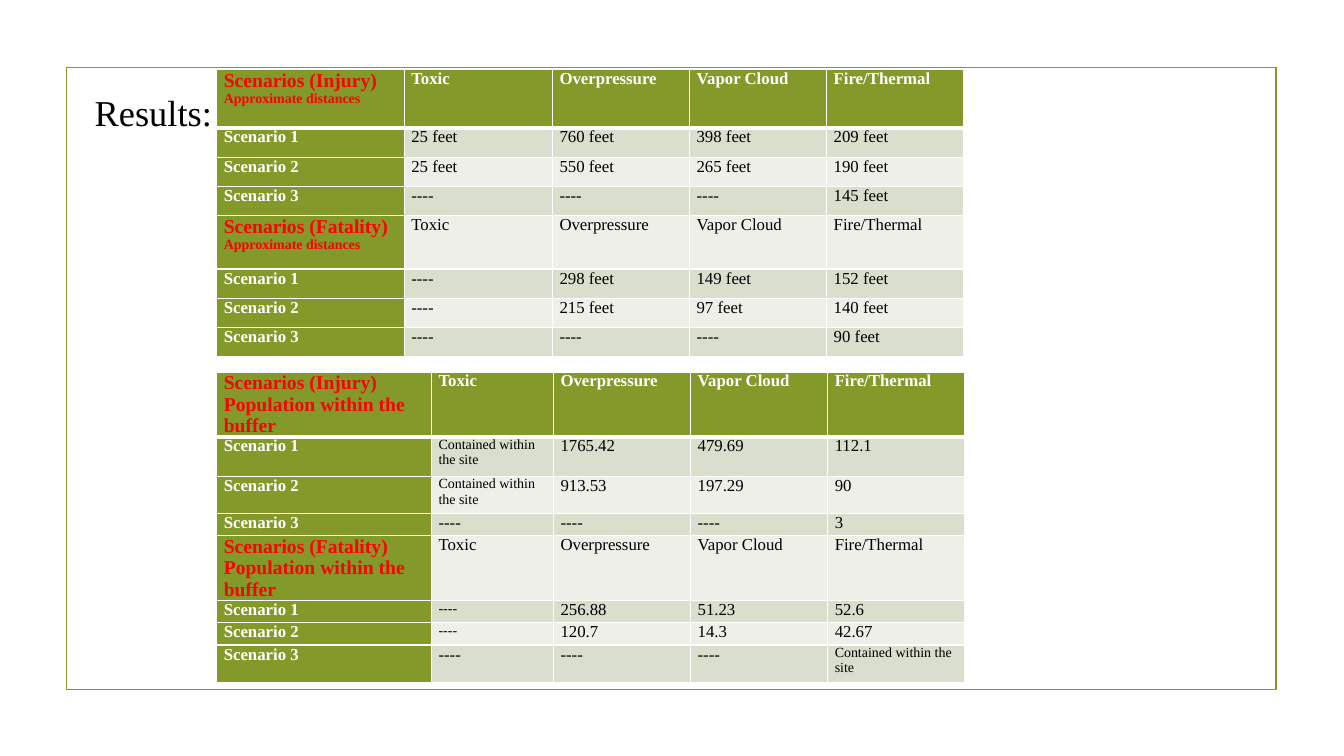
from lxml import etree
from pptx import Presentation
from pptx.dml.color import RGBColor
from pptx.enum.shapes import MSO_SHAPE
from pptx.oxml.ns import qn
from pptx.util import Inches, Pt

RECTANGLE = MSO_SHAPE.RECTANGLE
OLIVE = RGBColor(0x83, 0x99, 0x2A)
BAND_DARK = RGBColor(0xD9, 0xDE, 0xCD)
BAND_LIGHT = RGBColor(0xED, 0xEF, 0xE8)
WHITE = RGBColor(0xFF, 0xFF, 0xFF)
BLACK = RGBColor(0, 0, 0)
RED = RGBColor(0xFF, 0, 0)
FONT = "Times New Roman"

HAZARDS = ["Toxic", "Overpressure", "Vapor Cloud", "Fire/Thermal"]
NONE = "----"
SMALL_NONE = (NONE, 10)
CONTAINED = ("Contained within the site", 10)

DISTANCES = {
    "top": 0.69,
    "height": 2.84,
    "columns": [1.86, 1.47, 1.36, 1.36, 1.36],
    "rows": [0.58, 0.29, 0.29, 0.29, 0.53, 0.29, 0.29, 0.29],
    "subtitle": ("Approximate distances", 10),
    "groups": {
        "Injury": [
            ["25 feet", "760 feet", "398 feet", "209 feet"],
            ["25 feet", "550 feet", "265 feet", "190 feet"],
            [NONE, NONE, NONE, "145 feet"],
        ],
        "Fatality": [
            [NONE, "298 feet", "149 feet", "152 feet"],
            [NONE, "215 feet", "97 feet", "140 feet"],
            [NONE, NONE, NONE, "90 feet"],
        ],
    },
}
POPULATION = {
    "top": 3.69,
    "height": 3.2,
    "columns": [2.13, 1.21, 1.36, 1.36, 1.36],
    "rows": [0.48, 0.39, 0.37, 0.22, 0.41, 0.22, 0.22, 0.37],
    "subtitle": ("Population within the buffer", 14),
    "groups": {
        "Injury": [
            [CONTAINED, "1765.42", "479.69", "112.1"],
            [CONTAINED, "913.53", "197.29", "90"],
            [NONE, NONE, NONE, "3"],
        ],
        "Fatality": [
            [SMALL_NONE, "256.88", "51.23", "52.6"],
            [SMALL_NONE, "120.7", "14.3", "42.67"],
            [NONE, NONE, NONE, CONTAINED],
        ],
    },
}
TABLE_LEFT = 2.15
CELL_MARGINS = {
    "margin_left": Inches(0.07),
    "margin_right": Inches(0.07),
    "margin_top": 0,
    "margin_bottom": 0,
}


def write_paragraph(paragraph, text, size, color, bold=False):
    run = paragraph.add_run()
    run.text = text
    run.font.color.rgb = color
    for name, value in {"name": FONT, "size": Pt(size), "bold": bold}.items():
        setattr(run.font, name, value)


def set_borders(cell, widths):
    properties = cell._tc.get_or_add_tcPr()
    for position, (side, width) in enumerate(widths.items()):
        line = etree.Element(qn(f"a:ln{side}"), w=str(Pt(width)))
        fill = etree.SubElement(line, qn("a:solidFill"))
        etree.SubElement(fill, qn("a:srgbClr"), val=str(WHITE))
        properties.insert(position, line)


def table_rows(content):
    rows = []
    for group, scenarios in content["groups"].items():
        title = [(f"Scenarios ({group})", 14), content["subtitle"]]
        rows.append([title] + [[(hazard, 12)] for hazard in HAZARDS])
        for number, values in enumerate(scenarios, 1):
            cells = [f"Scenario {number}"] + values
            rows.append([[value if isinstance(value, tuple) else (value, 12)]
                         for value in cells])
    return rows


def add_results_table(slide, content):
    rows = table_rows(content)
    widths, heights = content["columns"], content["rows"]
    table = slide.shapes.add_table(
        len(rows), len(widths), Inches(TABLE_LEFT), Inches(content["top"]),
        Inches(sum(widths)), Inches(content["height"])).table
    table.first_col = True
    for column, width in zip(table.columns, widths):
        column.width = Inches(width)
    for row, height in zip(table.rows, heights):
        row.height = Inches(height)

    for row_index, row in enumerate(rows):
        band = BAND_DARK if row_index % 2 else BAND_LIGHT
        for column_index, lines in enumerate(row):
            cell = table.cell(row_index, column_index)
            heading = row_index == 0 or column_index == 0
            color = WHITE if heading else BLACK
            if len(lines) > 1:
                color = RED
            for name, value in CELL_MARGINS.items():
                setattr(cell, name, value)
            cell.fill.solid()
            cell.fill.fore_color.rgb = OLIVE if heading else band
            set_borders(cell, {"L": 1, "R": 1,
                               "T": 3 if row_index == 1 else 1,
                               "B": 3 if row_index == 0 else 1})
            frame = cell.text_frame
            for line_index, (text, size) in enumerate(lines):
                paragraph = frame.add_paragraph() if line_index else frame.paragraphs[0]
                write_paragraph(paragraph, text, size, color, heading)


def main():
    presentation = Presentation()
    presentation.slide_width = Inches(13.33)
    presentation.slide_height = Inches(7.5)
    slide = presentation.slides.add_slide(presentation.slide_layouts[6])

    border = slide.shapes.add_shape(
        RECTANGLE, Inches(0.66), Inches(0.67), Inches(12), Inches(6.17))
    border.shadow.inherit = False
    border.fill.background()
    border.line.color.rgb = OLIVE
    border.line.width = Pt(1.25)

    for content in (DISTANCES, POPULATION):
        add_results_table(slide, content)

    title = slide.shapes.add_textbox(
        Inches(0.84), Inches(0.85), Inches(2.25), Inches(0.54))
    title.text_frame.word_wrap = True
    write_paragraph(title.text_frame.paragraphs[0], "Results:", 26, BLACK)

    presentation.save("out.pptx")


if __name__ == "__main__":
    main()
